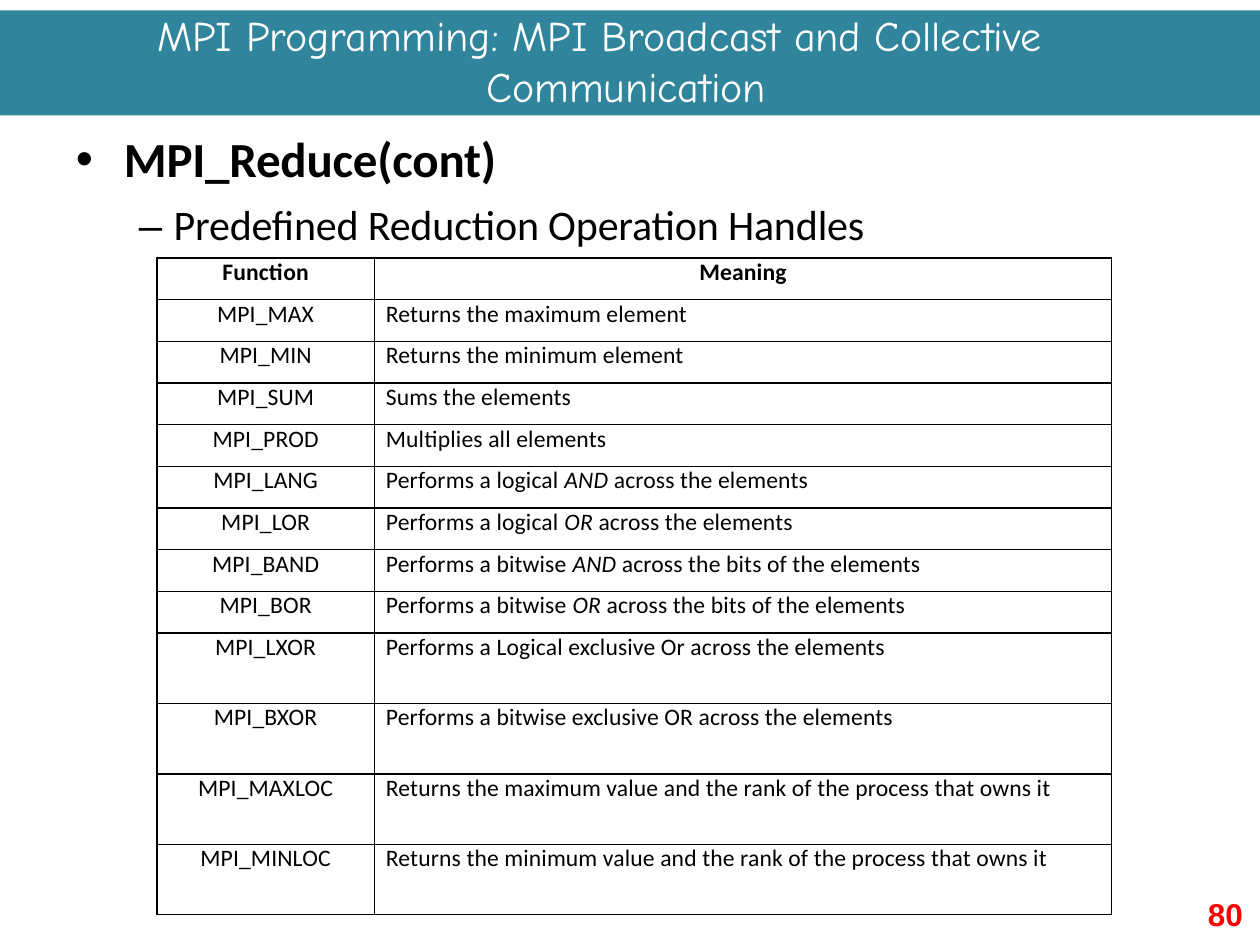
"""Build the slide on predefined MPI reduction handles."""
from lxml import etree
from pptx import Presentation
from pptx import util as u
from pptx.dml import color
from pptx.enum import shapes, text
from pptx.oxml import ns

Cm, Pt = u.Cm, u.Pt
HUES = {"band": "30859C", "ink": "000000", "title": "FFFFFF", "num": "FF0000"}
FRAME = {"margin_left": 0, "margin_right": 0, "margin_top": 0, "margin_bottom": 0,
         "word_wrap": True, "vertical_anchor": text.MSO_ANCHOR.TOP}
CELL = {k: v for k, v in FRAME.items() if k != "word_wrap"}
HEAD = {"name": "Comic Neue", "size": Pt(24), "bold": False}
TOPIC = {"name": "Calibri", "size": Pt(28), "bold": True}
SUB = {"name": "Calibri", "size": Pt(24), "bold": False}
DASH = {**SUB, "name": "Arial"}
NUM = {"name": "Arial", "size": Pt(18), "bold": True}
GRID = {"name": "Calibri", "size": Pt(13.5), "bold": False}
COLS = (4.39, 14.86)
LOW, HIGH = 0.84, 1.42
ROWS = (
    ("MPI_MAX", "Returns the maximum element", LOW),
    ("MPI_MIN", "Returns the minimum element", LOW),
    ("MPI_SUM", "Sums the elements", LOW),
    ("MPI_PROD", "Multiplies all elements", LOW),
    ("MPI_LANG", "Performs a logical *AND *across the elements", LOW),
    ("MPI_LOR", "Performs a logical *OR *across the elements", LOW),
    ("MPI_BAND", "Performs a bitwise *AND *across the bits of the elements", LOW),
    ("MPI_BOR", "Performs a bitwise *OR *across the bits of the elements", LOW),
    ("MPI_LXOR", "Performs a Logical exclusive Or across the elements", HIGH),
    ("MPI_BXOR", "Performs a bitwise exclusive OR across the elements", HIGH),
    ("MPI_MAXLOC", "Returns the maximum value and the rank of the process that owns it", HIGH),
    ("MPI_MINLOC", "Returns the minimum value and the rank of the process that owns it", HIGH),
)


def put(item, vals):
    """Set each attribute in vals on item."""
    for key, val in vals.items():
        setattr(item, key, val)


def place(shape, left, top, width, height):
    """Move and size a shape, in centimetres."""
    put(shape, {"left": Cm(left), "top": Cm(top), "width": Cm(width), "height": Cm(height)})


def add_run(par, words, font, hue="ink", gap=0):
    """Add a run with its font, colour and letter gap."""
    run = par.add_run()
    run.text = words
    put(run.font, font)
    run.font.color.rgb = color.RGBColor.from_string(HUES[hue])
    run.font._element.set("spc", str(gap))


def indent(par, left, first=0):
    """Set the left margin and first-line indent of a paragraph."""
    props = par._p.get_or_add_pPr()
    props.set("marL", str(Cm(left)))
    props.set("indent", str(Cm(first)))
    return props


def add_box(slide, *spot):
    """Add a text box without margins and return its frame."""
    box = slide.shapes.add_textbox(0, 0, 0, 0)
    place(box, *spot)
    put(box.text_frame, FRAME)
    return box.text_frame


def add_band(slide):
    """Add the title band behind everything else."""
    band = slide.shapes.add_shape(shapes.MSO_SHAPE.RECTANGLE, 0, 0, 0, 0)
    place(band, 0, 0.21, 25.4, 2.12)
    band.fill.solid()
    band.fill.fore_color.rgb = color.RGBColor.from_string(HUES["band"])
    band.line.fill.background()
    band.shadow.inherit = False
    slide.shapes._spTree.insert(2, band._element)


def add_title(slide, words):
    """Format the title placeholder with a hanging indent."""
    title = slide.shapes.title
    place(title, 3.16, 0.2, 19.12, 2.08)
    put(title.text_frame, {**FRAME, "auto_size": text.MSO_AUTO_SIZE.NONE})
    par = title.text_frame.paragraphs[0]
    put(par, {"alignment": text.PP_ALIGN.LEFT, "line_spacing": 1.0, "space_before": Pt(0)})
    indent(par, 6.65, -6.64)
    add_run(par, words, HEAD, "title", -5)


def add_topic(slide):
    """Add the bulleted topic and its sub-heading."""
    frame = add_box(slide, 1.5, 2.6, 16.2, 2.49)
    par = frame.paragraphs[0]
    props = indent(par, 1, -0.97)
    etree.SubElement(props, ns.qn("a:buFont"), typeface="Arial")
    etree.SubElement(props, ns.qn("a:buChar"), char="•")
    add_run(par, "MPI_Reduce(cont)", TOPIC, gap=-10)
    par = frame.add_paragraph()
    par.space_before = Pt(6)
    indent(par, 1.3)
    add_run(par, "– ", DASH, gap=-10)
    add_run(par, "Predefined Reduction Operation Handles", SUB, gap=-10)


def edge(cell):
    """Draw the four borders of a cell."""
    props = cell._tc.get_or_add_tcPr()
    for spot, side in enumerate(("lnL", "lnR", "lnT", "lnB")):
        line = etree.Element(ns.qn("a:" + side), w=str(Pt(1)))
        fill = etree.SubElement(line, ns.qn("a:solidFill"))
        etree.SubElement(fill, ns.qn("a:srgbClr"), val=HUES["ink"])
        props.insert(spot, line)


def fill_cell(cell, words, mid, bold):
    """Write a cell, with starred words in italics."""
    put(cell, CELL)
    cell.fill.background()
    edge(cell)
    par = cell.text_frame.paragraphs[0]
    par.space_before = Pt(2.5)
    if mid:
        par.alignment = text.PP_ALIGN.CENTER
    else:
        indent(par, 0.23)
    for spot, part in enumerate(words.split("*")):
        add_run(par, part, {**GRID, "bold": bold, "italic": spot % 2 == 1}, gap=10)


def add_grid(slide):
    """Add the table of reduction functions."""
    rows = (("Function", "Meaning", LOW),) + ROWS
    high = sum(row[2] for row in rows)
    grid = slide.shapes.add_table(len(rows), len(COLS), Cm(3.16), Cm(5.2),
                                  Cm(sum(COLS)), Cm(high)).table
    for col, width in zip(grid.columns, COLS):
        col.width = Cm(width)
    for y, (*cells, height) in enumerate(rows):
        grid.rows[y].height = Cm(height)
        for x, words in enumerate(cells):
            fill_cell(grid.cell(y, x), words, x == 0 or y == 0, y == 0)


def add_num(slide, words):
    """Add the slide number."""
    par = add_box(slide, 24.28, 18.13, 0.87, 0.8).paragraphs[0]
    par.line_spacing = Pt(19.2)
    indent(par, 0.07)
    add_run(par, words, NUM, "num")


def main():
    """Build and save the slide."""
    deck = Presentation()
    put(deck, {"slide_width": Cm(25.4), "slide_height": Cm(19.05)})
    slide = deck.slides.add_slide(deck.slide_layouts[5])
    add_band(slide)
    add_topic(slide)
    add_num(slide, "80")
    add_title(slide, "MPI Programming: MPI Broadcast and Collective Communication")
    add_grid(slide)
    deck.save("out.pptx")


if __name__ == "__main__":
    main()
